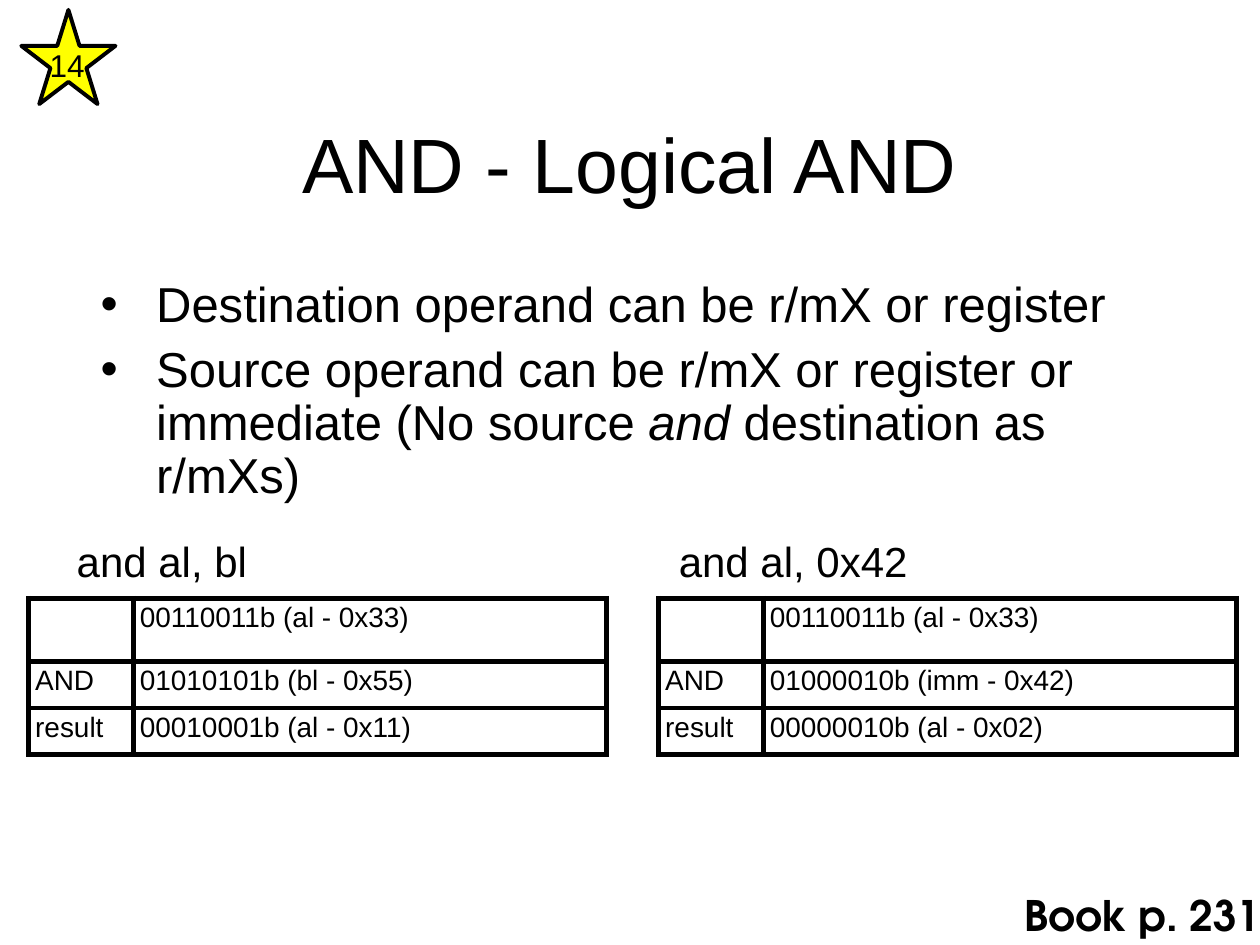
from lxml.etree import SubElement
from pptx import Presentation
from pptx.dml.color import RGBColor
from pptx.enum.shapes import MSO_SHAPE
from pptx.enum.text import MSO_ANCHOR, MSO_AUTO_SIZE, PP_ALIGN
from pptx.oxml.ns import qn
from pptx.util import Cm, Pt

COLORS = {"ink": "000000", "star": "FFFF00"}
BODY_FONT = "Arial"
REFERENCE_FONT = "TeX Gyre Adventor"
INSET = Cm(0.13)
COLUMN_WIDTHS = [Cm(2.11), Cm(9.53)]
ROW_HEIGHTS = [Cm(1.27), Cm(0.94), Cm(0.94)]

BULLETS = [
    [("Destination operand can be r/mX or register", False)],
    [
        ("Source operand can be r/mX or register or immediate (No source ", False),
        ("and", True),
        (" destination as r/mXs)", False),
    ],
]
EXAMPLES = [
    {
        "instruction": "and al, bl",
        "label_box": (1.4, 10.69, 3.73, 1.22),
        "table_left": 0.58,
        "rows": [
            ("", "00110011b (al - 0x33)"),
            ("AND", "01010101b (bl - 0x55)"),
            ("result", "00010001b (al - 0x11)"),
        ],
    },
    {
        "instruction": "and al, 0x42",
        "label_box": (13.54, 10.69, 4.9, 1.22),
        "table_left": 13.28,
        "rows": [
            ("", "00110011b (al - 0x33)"),
            ("AND", "01000010b (imm - 0x42)"),
            ("result", "00000010b (al - 0x02)"),
        ],
    },
]


def color(name):
    return RGBColor.from_string(COLORS[name])


def add_run(paragraph, text, size, font=BODY_FONT, bold=False, italic=False):
    run = paragraph.add_run()
    run.text = text
    run.font.size = Pt(size)
    run.font.name = font
    run.font.bold = bold
    run.font.italic = italic
    run.font.color.rgb = color("ink")


def set_frame(frame, inset=INSET, anchor=MSO_ANCHOR.TOP, wrap=True):
    frame.word_wrap = wrap
    frame.auto_size = MSO_AUTO_SIZE.SHAPE_TO_FIT_TEXT
    frame.vertical_anchor = anchor
    frame.margin_left = frame.margin_right = inset
    frame.margin_top = frame.margin_bottom = inset


def add_title(slide, text):
    title = slide.shapes.title
    title.left, title.top = Cm(1.9), Cm(2.29)
    title.width, title.height = Cm(21.59), Cm(1.96)
    set_frame(title.text_frame, Cm(0), MSO_ANCHOR.MIDDLE)
    heading = title.text_frame.paragraphs[0]
    heading.alignment = PP_ALIGN.CENTER
    add_run(heading, text, 44)


def add_label(slide, box, text, size, align=PP_ALIGN.CENTER,
              anchor=MSO_ANCHOR.MIDDLE, font=BODY_FONT, bold=False):
    label = slide.shapes.add_textbox(*map(Cm, box))
    set_frame(label.text_frame, anchor=anchor, wrap=False)
    line = label.text_frame.paragraphs[0]
    line.alignment = align
    add_run(line, text, size, font, bold)


def add_bullets(slide, box, bullets):
    frame = slide.shapes.add_textbox(*map(Cm, box)).text_frame
    set_frame(frame)
    for index, runs in enumerate(bullets):
        item = frame.add_paragraph() if index else frame.paragraphs[0]
        item.line_spacing = 0.9
        item.space_before = Pt(7)
        properties = item._p.get_or_add_pPr()
        properties.set("marL", str(Cm(1.12)))
        properties.set("indent", str(-Cm(1.12)))
        SubElement(properties, qn("a:buFont"), typeface=BODY_FONT)
        SubElement(properties, qn("a:buChar"), char="•")
        for text, italic in runs:
            add_run(item, text, 28, italic=italic)


def add_borders(cell):
    properties = cell._tc.get_or_add_tcPr()
    for side in ("lnL", "lnR", "lnT", "lnB"):
        border = SubElement(properties, qn(f"a:{side}"), w=str(Pt(3)))
        fill = SubElement(border, qn("a:solidFill"))
        SubElement(fill, qn("a:srgbClr"), val=COLORS["ink"])


def add_operation_table(slide, left, rows):
    table = slide.shapes.add_table(
        len(rows), len(COLUMN_WIDTHS), Cm(left), Cm(12.06),
        sum(COLUMN_WIDTHS), sum(ROW_HEIGHTS),
    ).table
    table.first_row = table.horz_banding = False
    for column, width in zip(table.columns, COLUMN_WIDTHS):
        column.width = width
    for row, height, texts in zip(table.rows, ROW_HEIGHTS, rows):
        row.height = height
        for cell, text in zip(row.cells, texts):
            cell.margin_left = cell.margin_right = INSET
            cell.margin_top = cell.margin_bottom = INSET
            add_borders(cell)
            cell.fill.background()
            if text:
                entry = cell.text_frame.paragraphs[0]
                entry.line_spacing = 0.93
                entry.space_before = Pt(4)
                add_run(entry, text, 16)


def add_star(slide, number):
    star = slide.shapes.add_shape(
        MSO_SHAPE.STAR_5_POINT, Cm(0.43), Cm(0.2), Cm(1.9), Cm(1.9))
    star.shadow.inherit = False
    star.fill.solid()
    star.fill.fore_color.rgb = color("star")
    star.line.color.rgb = color("ink")
    star.line.width = Pt(2.25)
    add_label(slide, (0.86, 0.81, 0.99, 0.99), number, 18)


def main():
    deck = Presentation()
    deck.slide_width, deck.slide_height = Cm(25.4), Cm(19.05)
    slide = deck.slides.add_slide(deck.slide_layouts.get_by_name("Title Only"))
    add_title(slide, "AND - Logical AND")
    add_bullets(slide, (1.9, 5.51, 22.43, 3.63), BULLETS)
    for example in EXAMPLES:
        add_operation_table(slide, example["table_left"], example["rows"])
        add_label(slide, example["label_box"], example["instruction"], 24)
    add_star(slide, "14")
    add_label(slide, (20.52, 17.81, 5.05, 1.3), "Book p. 231", 24,
              PP_ALIGN.LEFT, MSO_ANCHOR.TOP, REFERENCE_FONT, True)
    deck.save("out.pptx")


if __name__ == "__main__":
    main()
